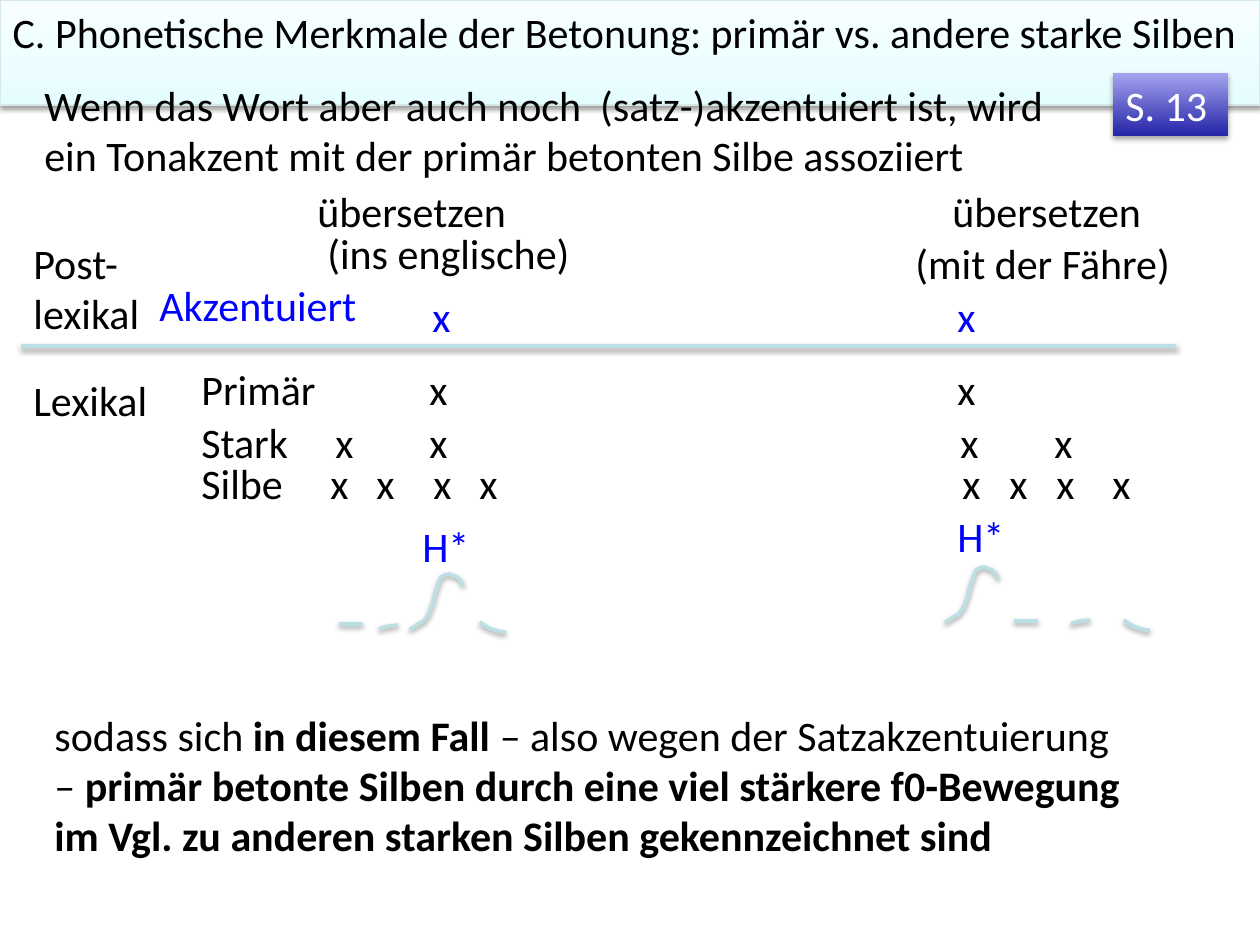
from lxml.etree import SubElement
from pptx import Presentation
from pptx.dml.color import RGBColor
from pptx.enum.shapes import MSO_CONNECTOR, MSO_SHAPE
from pptx.enum.text import MSO_ANCHOR as ANCHOR, MSO_AUTO_SIZE as AUTO_SIZE, PP_ALIGN as ALIGN
from pptx.oxml.ns import qn
from pptx.util import Pt

PX = 914400 / 126
BLACK = RGBColor(0x00, 0x00, 0x00)
WHITE = RGBColor(0xFF, 0xFF, 0xFF)
BLUE = RGBColor(0x00, 0x00, 0xFF)
TEAL = RGBColor(0xBB, 0xE0, 0xE3)
BAR_EDGE = RGBColor(0xD5, 0xE8, 0xEA)
BAR_COLORS = RGBColor(0xE6, 0xFD, 0xFF), RGBColor(0xF8, 0xFE, 0xFF)
PAGE_COLORS = RGBColor(0x24, 0x24, 0xA8), RGBColor(0xA4, 0xA4, 0xEF)


def write(shape, box, runs, color=BLACK, tabs=()):
    """Place the shape at box and fill it with (text, bold) runs; box and tabs in px."""
    shape.left, shape.top, shape.width, shape.height = (round(n * PX) for n in box)
    frame = shape.text_frame
    frame.word_wrap = True
    frame.auto_size = AUTO_SIZE.SHAPE_TO_FIT_TEXT
    frame.vertical_anchor = ANCHOR.TOP
    paragraph = frame.paragraphs[0]
    paragraph.alignment = ALIGN.LEFT
    if tabs:
        stops = SubElement(paragraph._p.get_or_add_pPr(), qn("a:tabLst"))
        for tab in tabs:
            SubElement(stops, qn("a:tab"), pos=str(round(tab * PX)), algn="l")
    for text, bold in runs:
        run = paragraph.add_run()
        run.text = text
        run.font.name, run.font.size, run.font.bold = "Calibri", Pt(24), bold
        run.font.color.rgb = color


def add_shadow(shape, alpha=38, distance=1.6):
    """Drop a soft black shadow straight down; call after fill and line are set."""
    effects = SubElement(shape._element.spPr, qn("a:effectLst"))
    shadow = SubElement(effects, qn("a:outerShdw"), blurRad=str(Pt(3.1)),
                        dist=str(Pt(distance)), dir="5400000", rotWithShape="0")
    black = SubElement(shadow, qn("a:srgbClr"), val="000000")
    SubElement(black, qn("a:alpha"), val=str(alpha * 1000))


prs = Presentation()
prs.slide_width, prs.slide_height = round(1260 * PX), round(945 * PX)
slide = prs.slides.add_slide(prs.slide_layouts[5])
shapes = slide.shapes

# Title bar and page badge
title = shapes.title
write(title, (0, 0, 1260, 64),
      [("C. Phonetische Merkmale der Betonung: primär vs. andere starke Silben", False)])
title.line.color.rgb = BAR_EDGE
title.line.width = Pt(0.75)
page = shapes.add_shape(MSO_SHAPE.RECTANGLE, 0, 0, 0, 0)
write(page, (1113, 73, 115, 63), [("S. 13", False)], WHITE)
page.line.fill.background()
for panel, colors in ((title, BAR_COLORS), (page, PAGE_COLORS)):
    panel.fill.gradient()
    panel.fill.gradient_angle = 90
    for stop, color in zip(panel.fill.gradient_stops, colors):
        stop.color.rgb = color
add_shadow(title)
add_shadow(page, 35, 1.8)

# Line between the postlexical and the lexical level
divider = shapes.add_connector(MSO_CONNECTOR.STRAIGHT, *(round(n * PX) for n in (21, 346, 1176, 346)))
divider.line.color.rgb = TEAL
divider.line.width = Pt(2)
add_shadow(divider)

# Explanations
write(shapes.add_textbox(0, 0, 0, 0), (32, 73, 1061, 115),
      [("Wenn das Wort aber auch noch  (satz-)akzentuiert ist, wird ein Tonakzent "
        "mit der primär betonten Silbe assoziiert", False)])
write(shapes.add_textbox(0, 0, 0, 0), (42, 703, 1103, 165),
      [("sodass sich ", False), ("in diesem Fall ", True),
       ("– also wegen der Satzakzentuierung – ", False),
       ("primär betonte Silben durch eine viel stärkere f0-Bewegung im Vgl. zu anderen "
        "starken Silben gekennzeichnet sind", True)])

# Labels and accent marks
labels = [
    ("Lexikal", (21, 368, 147, 64), BLACK),
    ("Post-lexikal", (21, 231, 158, 116), BLACK),
    ("(ins englische)", (315, 221, 284, 64), BLACK),
    ("(mit der Fähre)", (903, 231, 284, 64), BLACK),
    ("Akzentuiert", (147, 273, 231, 64), BLUE),
    ("x", (420, 284, 63, 64), BLUE),
    ("x", (945, 284, 63, 64), BLUE),
    ("H*", (410, 514, 73, 64), BLUE),
    ("H*", (945, 504, 73, 64), BLUE),
]
for text, box, color in labels:
    write(shapes.add_textbox(0, 0, 0, 0), box, [(text, False)], color)

# Metrical grid: each tab stop holds one mark
write(shapes.add_textbox(0, 0, 0, 0), (305, 179, 872, 64),
      [("übersetzen\tübersetzen", False)], tabs=[635])
grid_rows = [
    ("Primär", 357, [228, 756]),
    ("Stark", 410, [134, 228, 759, 853]),
    ("Silbe", 451, [129, 175, 232, 278, 761, 808, 855, 911]),
]
for level, top, marks in grid_rows:
    write(shapes.add_textbox(0, 0, 0, 0), (189, top, 1134, 63),
          [(level + "\tx" * len(marks), False)], tabs=marks)

# Pitch contours, one stroke per syllable, as px offsets from the stroke's start
FLAT = [(24, 0)]
SLIGHT = [(5, -2), (10, -3), (19, -4)]
RISE = [(4, -2), (8, -5), (10, -6), (14, -8), (19, -15), (21, -21), (23, -26), (24, -30),
        (25, -35), (26, -38), (28, -44), (31, -52), (35, -54), (39, -55), (44, -53),
        (47, -52), (50, -49), (53, -43)]
FALL = [(4, 3), (9, 6), (15, 8), (21, 10), (26, 10)]
strokes = [
    (339, 624, FLAT), (379, 629, SLIGHT), (410, 629, RISE), (480, 622, FALL),
    (945, 622, RISE), (1014, 621, FLAT), (1071, 624, SLIGHT), (1124, 620, FALL),
]
for x, y, offsets in strokes:
    builder = shapes.build_freeform(x, y, scale=PX)
    builder.add_line_segments([(x + dx, y + dy) for dx, dy in offsets], close=False)
    contour = builder.convert_to_shape()
    contour.fill.background()
    contour.line.color.rgb = TEAL
    contour.line.width = Pt(2)
    add_shadow(contour)

prs.save("out.pptx")
